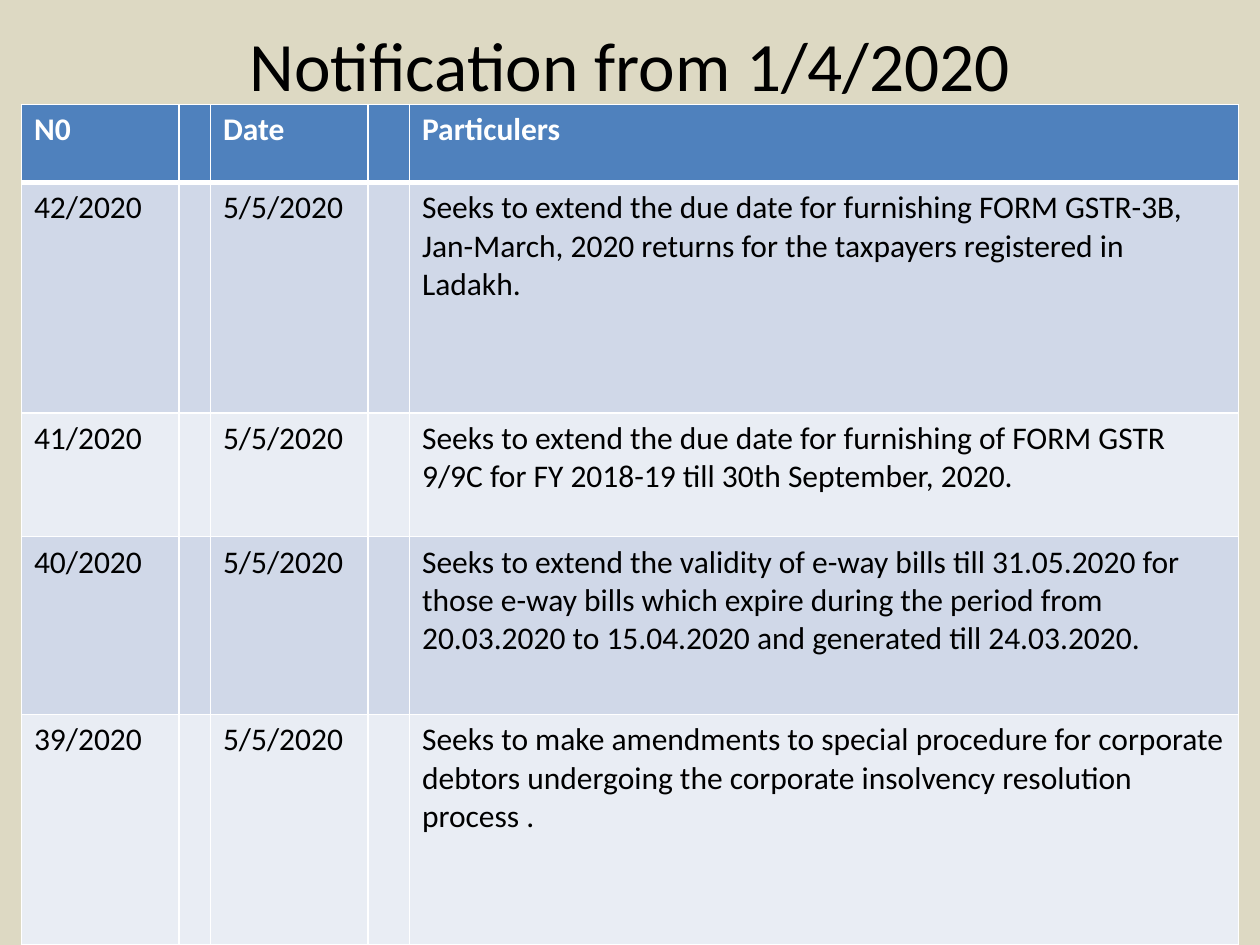
"""Build the slide that lists tax notifications in a table."""
from lxml import etree
from pptx import Presentation
from pptx.dml.color import RGBColor
from pptx.enum.text import MSO_ANCHOR, PP_ALIGN
from pptx.oxml.ns import qn
from pptx.util import Inches, Pt

MIDDLE = MSO_ANCHOR.MIDDLE
CENTER = PP_ALIGN.CENTER
TITLE_ONLY = 5
HEADER_FILL, BAND_FILLS = "4F81BD", ("E9EDF4", "D0D8E8")
COLUMN_WIDTHS = (1.25, 0.25, 1.25, 0.33, 6.58)
ROW_HEIGHTS = (0.62, 1.83, 0.98, 1.41, 1.83)
ROWS = (
    ("N0", "Date", "Particulers"),
    ("42/2020", "5/5/2020", "Seeks to extend the due date for furnishing FORM GSTR-3B, "
     "Jan-March, 2020 returns for the taxpayers registered in Ladakh."),
    ("41/2020", "5/5/2020", "Seeks to extend the due date for furnishing of FORM GSTR 9/9C "
     "for FY 2018-19 till 30th September, 2020."),
    ("40/2020", "5/5/2020", "Seeks to extend the validity of e-way bills till 31.05.2020 for "
     "those e-way bills which expire during the period from 20.03.2020 to 15.04.2020 and "
     "generated till 24.03.2020."),
    ("39/2020", "5/5/2020", "Seeks to make amendments to special procedure for corporate "
     "debtors undergoing the corporate insolvency resolution process ."),
)


def color(value):
    return RGBColor.from_string(value)


def add_text(para, text, size, value, bold=False):
    span = para.add_run()
    span.text = text
    span.font.name = "Calibri"
    span.font.size = Pt(size)
    span.font.bold = bold
    span.font.color.rgb = color(value)


deck = Presentation()
deck.slide_width, deck.slide_height = Inches(10), Inches(7.5)
page = deck.slides.add_slide(deck.slide_layouts[TITLE_ONLY])
page.background.fill.solid()
page.background.fill.fore_color.rgb = color("DDD9C3")

title = page.shapes.title
title.left, title.top = Inches(0.5), Inches(0.17)
title.width, title.height = Inches(9), Inches(0.67)
title.text_frame.vertical_anchor = MIDDLE
title_para = title.text_frame.paragraphs[0]
title_para.alignment = CENTER
add_text(title_para, "Notification from 1/4/2020", 39.6, "000000")

table = page.shapes.add_table(len(ROWS), len(COLUMN_WIDTHS), Inches(0.17), Inches(0.83),
                              Inches(9.67), Inches(6.67)).table
for column, width in zip(table.columns, COLUMN_WIDTHS):
    column.width = Inches(width)
for row, height in zip(table.rows, ROW_HEIGHTS):
    row.height = Inches(height)

for row_index, (number, date, particulars) in enumerate(ROWS):
    is_header = row_index == 0
    fill = HEADER_FILL if is_header else BAND_FILLS[row_index % 2]
    text_color = "FFFFFF" if is_header else "000000"
    border_points = {"L": 1, "R": 1, "T": 3 if row_index == 1 else 1, "B": 3 if is_header else 1}
    for column_index, text in enumerate((number, "", date, "", particulars)):
        cell = table.cell(row_index, column_index)
        properties = cell._tc.get_or_add_tcPr()
        for side, points in border_points.items():
            line = etree.SubElement(properties, qn(f"a:ln{side}"), w=str(Pt(points)))
            solid = etree.SubElement(line, qn("a:solidFill"))
            etree.SubElement(solid, qn("a:srgbClr"), val="FFFFFF")
        cell.fill.solid()
        cell.fill.fore_color.rgb = color(fill)
        if text:
            add_text(cell.text_frame.paragraphs[0], text, 18, text_color, is_header)

deck.save("out.pptx")
